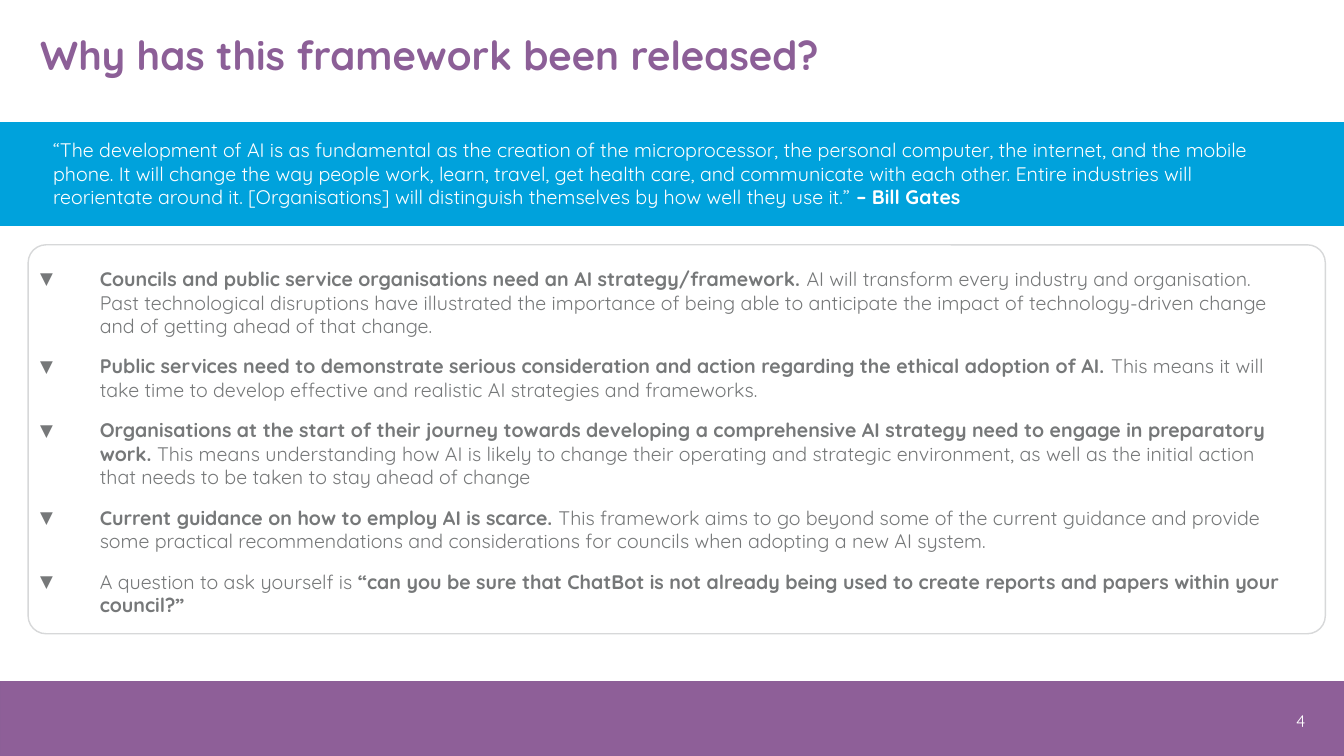
from dataclasses import dataclass

from lxml import etree
from pptx import Presentation
from pptx import util as u
from pptx.dml.color import RGBColor
from pptx.enum import shapes, text
from pptx.oxml.ns import qn

FONT = "Quicksand"
PURPLE, BLUE, GREY, PALE, WHITE = "8C5F97", "00A2DC", "767879", "D7D8D9", "FFFFFF"
FOOTER_PURPLE = "8E5F98"
SLIDE_WIDTH, SLIDE_HEIGHT = 33.87, 19.05


@dataclass(frozen=True)
class Box:
    left: float
    top: float
    width: float
    height: float

    def lengths(self) -> tuple:
        return tuple(u.Cm(n) for n in (self.left, self.top, self.width, self.height))


@dataclass(frozen=True)
class Panel:
    box: Box
    line: str
    fill: str | None = None
    corner: float = 0


@dataclass(frozen=True)
class Phrase:
    words: str
    bold: bool = False


PANELS = [
    Panel(Box(0, 17.17, SLIDE_WIDTH, 1.88), PURPLE, FOOTER_PURPLE),
    Panel(Box(0, 3.1, SLIDE_WIDTH, 2.57), BLUE, BLUE),
    Panel(Box(0.71, 6.17, 32.69, 9.8), PALE, corner=0.046),
]

QUOTE = [
    Phrase("“The development of AI is as fundamental as the creation of the microprocessor, "
           "the personal computer, the internet, and the mobile phone. It will change the way "
           "people work, learn, travel, get health care, and communicate with each other. Entire "
           "industries will reorientate around it. [Organisations] will distinguish themselves "
           "by how well they use it.” "),
    Phrase("– Bill Gates", True),
]

REASONS = [
    [Phrase("Councils and public service organisations need an AI strategy/framework. ", True),
     Phrase("AI will transform every industry and organisation. Past technological disruptions "
            "have illustrated the importance of being able to anticipate the impact of "
            "technology-driven change and of getting ahead of that change.")],
    [Phrase("Public services need to demonstrate serious consideration and action regarding "
            "the ethical adoption of AI. ", True),
     Phrase("This means it will take time to develop effective and realistic AI strategies "
            "and frameworks.")],
    [Phrase("Organisations at the start of their journey towards developing a comprehensive "
            "AI strategy need to engage in preparatory work. ", True),
     Phrase("This means understanding how AI is likely to change their operating and strategic "
            "environment, as well as the initial action that needs to be taken to stay ahead "
            "of change")],
    [Phrase("Current guidance on how to employ AI is scarce. ", True),
     Phrase("This framework aims to go beyond some of the current guidance and provide some "
            "practical recommendations and considerations for councils when adopting a new "
            "AI system.")],
    [Phrase("A question to ask yourself is "),
     Phrase("“can you be sure that ChatBot is not already being used to create reports and "
            "papers within your council?”", True)],
]


def colour(code: str) -> RGBColor:
    return RGBColor.from_string(code)


def draw_panel(slide, panel: Panel) -> None:
    kind = shapes.MSO_SHAPE.ROUNDED_RECTANGLE if panel.corner else shapes.MSO_SHAPE.RECTANGLE
    outline = slide.shapes.add_shape(kind, *panel.box.lengths())
    outline.shadow.inherit = False
    if panel.corner:
        outline.adjustments[0] = panel.corner
    if panel.fill:
        outline.fill.solid()
        outline.fill.fore_color.rgb = colour(panel.fill)
    else:
        outline.fill.background()
    outline.line.color.rgb = colour(panel.line)
    outline.line.width = u.Pt(1)


def place(holder, box: Box, anchor):
    holder.left, holder.top, holder.width, holder.height = box.lengths()
    frame = holder.text_frame
    frame.word_wrap = True
    frame.auto_size = text.MSO_AUTO_SIZE.NONE
    frame.vertical_anchor = anchor
    return frame


def write(paragraph, phrases: list[Phrase], size: float, ink: str,
          align=text.PP_ALIGN.LEFT) -> None:
    paragraph.alignment = align
    for phrase in phrases:
        run = paragraph.add_run()
        run.text = phrase.words
        run.font.name = FONT
        run.font.size = u.Pt(size)
        run.font.bold = phrase.bold
        run.font.color.rgb = colour(ink)


def add_bullet(paragraph) -> None:
    properties = paragraph._p.get_or_add_pPr()
    properties.set("marL", str(u.Cm(1.5)))
    properties.set("indent", str(u.Cm(-1.5)))
    bullet_colour = etree.SubElement(properties, qn("a:buClr"))
    etree.SubElement(bullet_colour, qn("a:srgbClr"), val=GREY)
    etree.SubElement(properties, qn("a:buSzPct"), val="85000")
    etree.SubElement(properties, qn("a:buFont"), typeface=FONT)
    etree.SubElement(properties, qn("a:buChar"), char="▼")


def main() -> None:
    deck = Presentation()
    deck.slide_width, deck.slide_height = u.Cm(SLIDE_WIDTH), u.Cm(SLIDE_HEIGHT)
    slide = deck.slides.add_slide(deck.slide_layouts[1])
    middle, top = text.MSO_ANCHOR.MIDDLE, text.MSO_ANCHOR.TOP

    for panel in PANELS:
        draw_panel(slide, panel)

    heading = place(slide.shapes.title, Box(0.76, 0.81, 26.67, 1.3), middle).paragraphs[0]
    heading.line_spacing = 0.9
    write(heading, [Phrase("Why has this framework been released?", True)], 28.8, PURPLE)

    reasons = place(slide.placeholders[1], Box(0.76, 6.6, 32.05, 10.34), top)
    for index, phrases in enumerate(REASONS):
        reason = reasons.add_paragraph() if index else reasons.paragraphs[0]
        add_bullet(reason)
        reason.space_before = u.Pt(12 if index else 0)
        write(reason, phrases, 14, GREY)

    quote_box = Box(1.09, 3.35, 31.72, 2.06)
    quote = place(slide.shapes.add_textbox(*quote_box.lengths()), quote_box, top)
    write(quote.paragraphs[0], QUOTE, 14, WHITE)

    number_box = Box(25.63, 17.65, 7.52, 1.02)
    number = place(slide.shapes.add_textbox(*number_box.lengths()), number_box, middle)
    write(number.paragraphs[0], [Phrase("4")], 12, WHITE, text.PP_ALIGN.RIGHT)

    deck.save("out.pptx")


if __name__ == "__main__":
    main()
